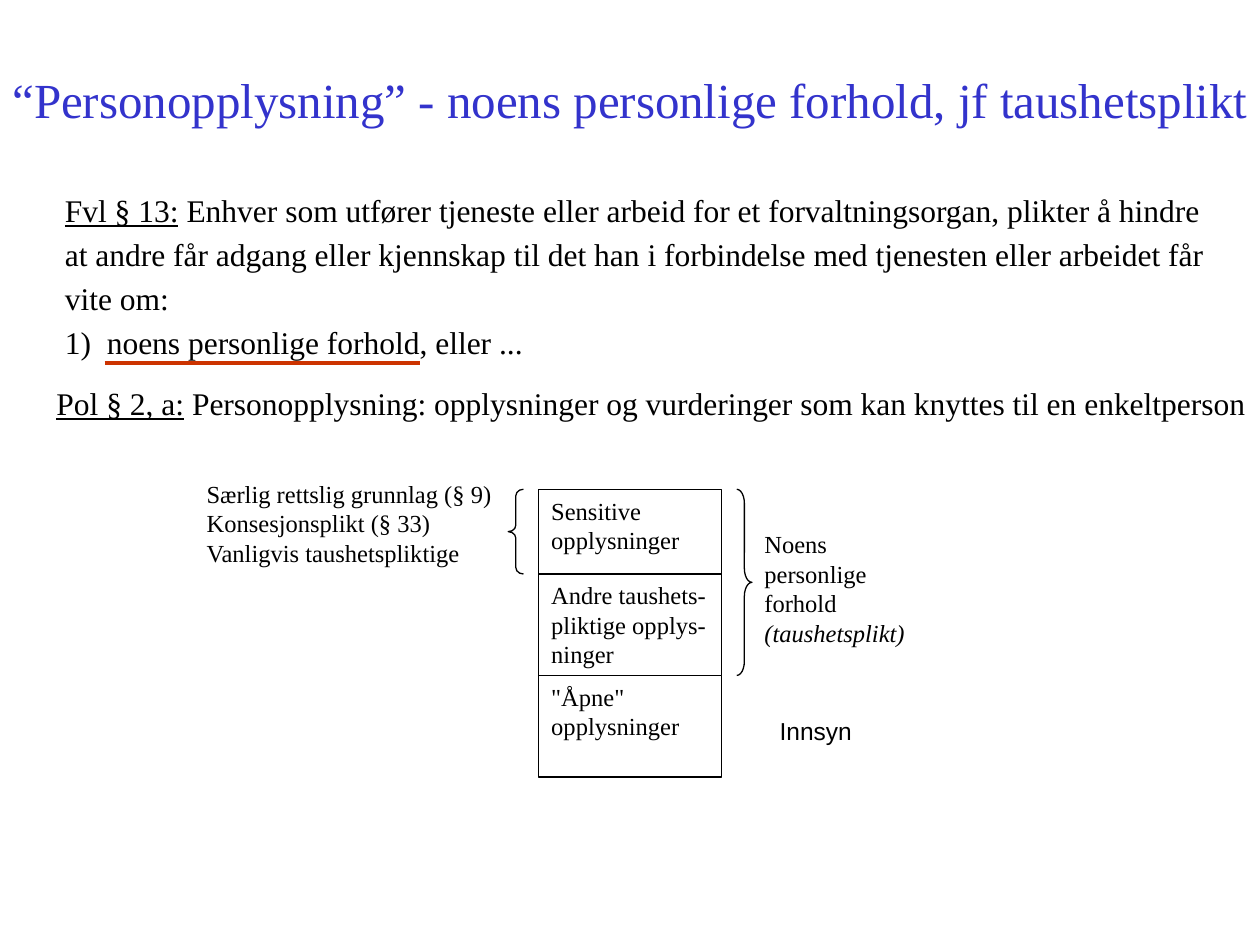
from dataclasses import dataclass
from lxml import etree
from pptx import Presentation
from pptx.dml.color import RGBColor as RGB
from pptx.enum.shapes import MSO_CONNECTOR, MSO_SHAPE as SHAPE
from pptx.enum.text import MSO_ANCHOR as ANCHOR, MSO_AUTO_SIZE as FIT, PP_ALIGN as ALIGN
from pptx.oxml.ns import qn
from pptx.util import Pt


@dataclass(frozen=True)
class Theme:
    black: RGB = RGB(0, 0, 0)
    white: RGB = RGB(0xFF, 0xFF, 0xFF)
    blue: RGB = RGB(0x33, 0x33, 0xCC)
    red: RGB = RGB(0xCC, 0x33, 0x00)
    serif: str = "Times New Roman"
    sans: str = "Arial"
    title: int = 28
    body: int = 18
    label: int = 14
    thin: float = 0.75
    thick: float = 2.25


T = Theme()


def write(sp, lines, size, color=T.black, font=T.serif, wrap=True):
    """Fill a shape with paragraphs; a (lead, rest) pair underlines its lead."""
    tf = sp.text_frame
    tf.word_wrap = wrap
    tf.vertical_anchor = ANCHOR.TOP
    for i, line in enumerate(lines):
        p = tf.paragraphs[0] if i == 0 else tf.add_paragraph()
        p.alignment = ALIGN.LEFT
        p.font.size, p.font.name = Pt(size), font
        p.font.color.rgb = color
        lead, rest = line if isinstance(line, tuple) else ("", line)
        if lead:
            r = p.add_run()
            r.text, r.font.underline = lead, True
        p.add_run().text = rest
    return tf


def add_shape(kind, x, y, w, h, filled=True, outlined=True):
    sp = s.shapes.add_shape(kind, Pt(x), Pt(y), Pt(w), Pt(h))
    sp.shadow.inherit = False
    if filled:
        sp.fill.solid()
        sp.fill.fore_color.rgb = T.white
    else:
        sp.fill.background()
    if outlined:
        sp.line.color.rgb, sp.line.width = T.black, Pt(T.thin)
    else:
        sp.line.fill.background()
    return sp


prs = Presentation()
prs.slide_width, prs.slide_height = Pt(720), Pt(540)
s = prs.slides.add_slide(prs.slide_layouts[6])

# Title and legal text
texts = [
    (0, 36, 720.5, 41, T.title, T.blue,
     ["“Personopplysning” - noens personlige forhold, jf taushetsplikt"]),
    (30, 111.5, 666, 103, T.body, T.black,
     [("Fvl § 13:", " Enhver som utfører tjeneste eller arbeid for et forvaltningsorgan, plikter å hindre"),
      "at andre får adgang eller kjennskap til det han i forbindelse med tjenesten eller arbeidet får",
      "vite om:",
      "1)  noens personlige forhold, eller ..."]),
    (25.2, 216, 695, 29, T.body, T.black,
     [("Pol § 2, a:", " Personopplysning: opplysninger og vurderinger som kan knyttes til en enkeltperson")]),
]
for x, y, w, h, size, color, lines in texts:
    box = s.shapes.add_textbox(Pt(x), Pt(y), Pt(w), Pt(h))
    tf = write(box, lines, size, color, wrap=False)
    tf.auto_size = FIT.SHAPE_TO_FIT_TEXT
    if len(lines) > 1:
        for p in tf.paragraphs:
            p.line_spacing, p.space_before, p.space_after = 0.7, Pt(5), Pt(5)

# Notes beside the stack
notes = [
    (111, 270, 180, 87, T.serif,
     ["Særlig rettslig grunnlag (§ 9)", "Konsesjonsplikt (§ 33)", "Vanligvis taushetspliktige"]),
    (429.7, 299, 104.5, 87, T.serif, ["Noens", "personlige", "forhold", "(taushetsplikt)"]),
    (438.4, 405.5, 87, 38.7, T.sans, ["Innsyn"]),
]
for x, y, w, h, font, lines in notes:
    tf = write(add_shape(SHAPE.RECTANGLE, x, y, w, h, outlined=False), lines, T.label, font=font)
    if len(lines) == 4:
        tf.paragraphs[-1].font.italic = True

# Stack of information categories
stack_top = y = 279.6
stack = [
    (48.4, ["Sensitive", "opplysninger"]),
    (58, ["Andre taushets-", "pliktige opplys-", "ninger"]),
    (58, ['"Åpne"', "opplysninger"]),
]
for h, lines in stack:
    write(add_shape(SHAPE.RECTANGLE, 307.9, y, 104.5, h), lines, T.label)
    y += h

# Braces: the left one spans the first category, the right one the first two
for kind, x, count, curve in [(SHAPE.LEFT_BRACE, 290.4, 1, 0.42), (SHAPE.RIGHT_BRACE, 421, 2, 0.92)]:
    span = sum(h for h, _ in stack[:count])
    brace = add_shape(kind, x, stack_top, 8.7, span, filled=False)
    brace.adjustments[0], brace.adjustments[1] = curve, 0.5

# Red underline
line = s.shapes.add_connector(MSO_CONNECTOR.STRAIGHT, Pt(59.8), Pt(207.4), Pt(239.8), Pt(207.4))
line.line.color.rgb, line.line.width = T.red, Pt(T.thick)
etree.SubElement(line._element.spPr, qn("a:effectLst"))

prs.save("out.pptx")
